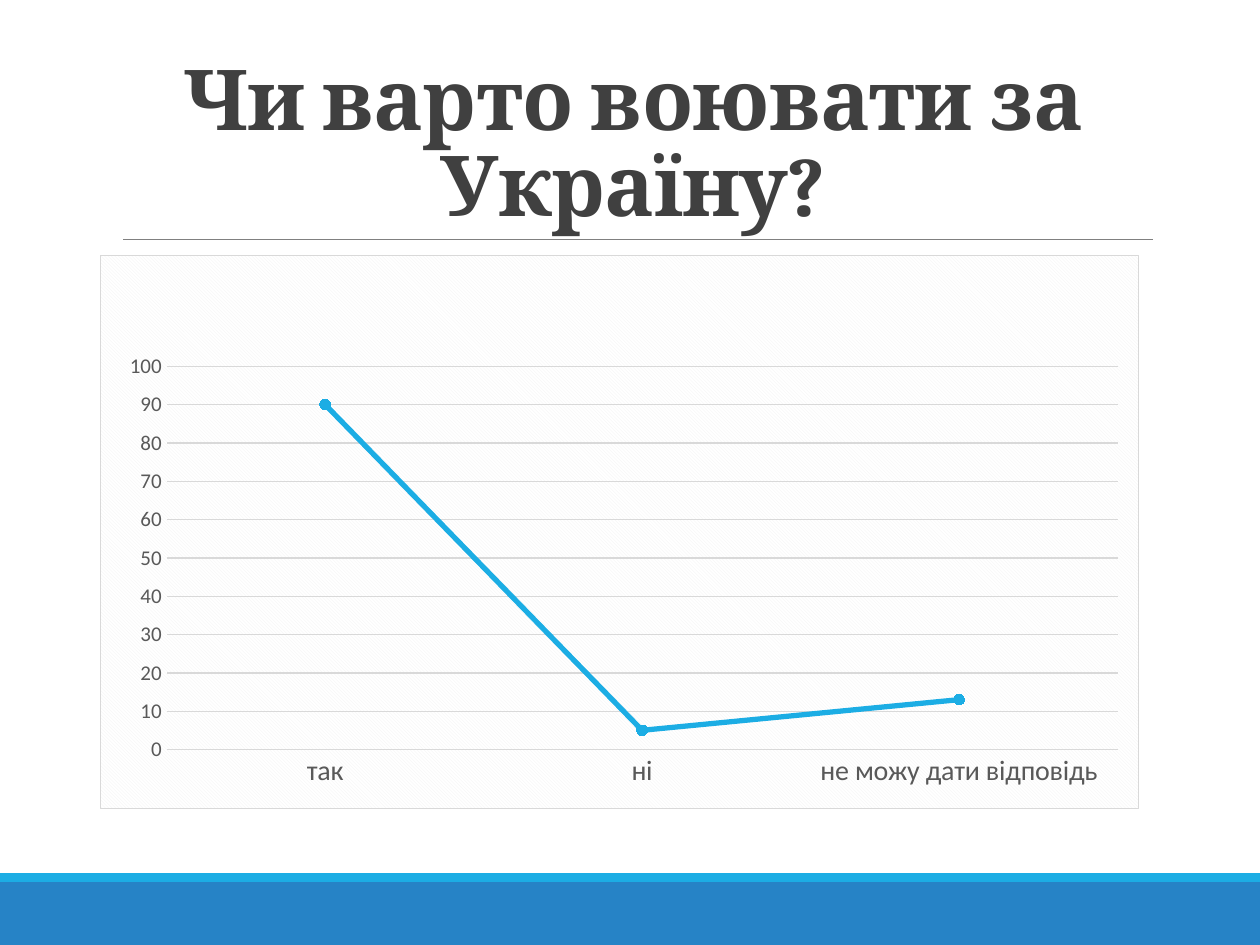
from lxml import etree
from pptx import Presentation
from pptx.chart.data import CategoryChartData
from pptx.dml.color import RGBColor
from pptx.enum.chart import XL_CHART_TYPE, XL_MARKER_STYLE, XL_TICK_MARK
from pptx.enum.shapes import MSO_CONNECTOR, MSO_SHAPE
from pptx.enum.text import MSO_ANCHOR, PP_ALIGN
from pptx.oxml import parse_xml
from pptx.oxml.ns import nsdecls, qn
from pptx.util import Inches, Pt

LINE = XL_CHART_TYPE.LINE_MARKERS
CIRCLE = XL_MARKER_STYLE.CIRCLE
NO_TICK = XL_TICK_MARK.NONE
STRAIGHT = MSO_CONNECTOR.STRAIGHT
RECT = MSO_SHAPE.RECTANGLE
BOTTOM = MSO_ANCHOR.BOTTOM
CENTER = PP_ALIGN.CENTER

BLUE = RGBColor(0x26, 0x83, 0xC6)
CYAN = RGBColor(0x1C, 0xAD, 0xE4)
DARK = RGBColor(0x40, 0x40, 0x40)
GRAY = RGBColor(0x80, 0x80, 0x80)
TEXT = RGBColor(0x59, 0x59, 0x59)
GRID = RGBColor(0xD9, 0xD9, 0xD9)
PALE = RGBColor(0xF2, 0xF2, 0xF2)
WHITE = RGBColor(0xFF, 0xFF, 0xFF)

ANSWERS = {"так": 90, "ні": 5, "не можу дати відповідь": 13}


def add_band(slide, left, top, width, height, color):
    """Draw one plain filled band."""
    band = slide.shapes.add_shape(
        RECT, Inches(left), Inches(top), Inches(width), Inches(height))
    band.shadow.inherit = False
    band.fill.solid()
    band.fill.fore_color.rgb = color
    band.line.fill.background()


def add_footer(slide, left, top, width, height):
    """Draw the footer with its thin bright strip on top."""
    strip = 0.07
    add_band(slide, left, top + strip, width, height - strip, BLUE)
    add_band(slide, left, top, width, strip, CYAN)


def add_title(slide, left, top, width, height):
    """Write the question and the rule beneath it."""
    base = Inches(top + height)
    rule = slide.shapes.add_connector(
        STRAIGHT, Inches(left + 0.08), base, Inches(left + width), base)
    rule.line.color.rgb = GRAY
    rule.line.width = Pt(0.5)
    etree.SubElement(rule._element.spPr, qn("a:effectLst"))

    box = slide.shapes.add_textbox(
        Inches(left), Inches(top), Inches(width), Inches(height))
    frame = box.text_frame
    frame.word_wrap = True
    frame.vertical_anchor = BOTTOM
    para = frame.paragraphs[0]
    para.alignment = CENTER
    para.line_spacing = 0.85
    run = para.add_run()
    run.text = "Чи варто воювати за Україну?"
    run.font.name = "Cambria"
    run.font.size = Pt(48)
    run.font.bold = True
    run.font.color.rgb = DARK
    run.font._element.set("spc", "-50")


def style_axis(axis, size):
    """Set the labels of an axis and hide its line."""
    axis.major_tick_mark = NO_TICK
    axis.minor_tick_mark = NO_TICK
    axis.format.line.fill.background()
    font = axis.tick_labels.font
    font.name = "Calibri"
    font.size = Pt(size)
    font.color.rgb = TEXT


def frame_chart(chart):
    """Give the chart its hatched ground, border and plot position."""
    space = chart._chartSpace
    space.find(qn("c:chart")).addnext(parse_xml(
        f'<c:spPr {nsdecls("c", "a")}><a:pattFill prst="dkDnDiag">'
        f'<a:fgClr><a:srgbClr val="{PALE}"/></a:fgClr>'
        f'<a:bgClr><a:srgbClr val="{WHITE}"/></a:bgClr></a:pattFill>'
        f'<a:ln w="{Pt(0.75)}"><a:solidFill><a:srgbClr val="{GRID}"/>'
        '</a:solidFill></a:ln></c:spPr>'))
    plot = space.find(".//" + qn("c:plotArea"))
    for old in plot.findall(qn("c:layout")):
        plot.remove(old)
    spots = {"x": 0.064, "y": 0.201, "w": 0.916, "h": 0.693}
    modes = "".join(f'<c:{key}Mode val="edge"/>' for key in "xy")
    sizes = "".join(f'<c:{key} val="{val}"/>' for key, val in spots.items())
    plot.insert(0, parse_xml(
        f'<c:layout {nsdecls("c")}><c:manualLayout>'
        f'<c:layoutTarget val="inner"/>{modes}{sizes}'
        '</c:manualLayout></c:layout>'))


def add_answers(slide, left, top, width, height):
    """Plot the answers as a line with round markers."""
    data = CategoryChartData()
    data.categories = list(ANSWERS)
    data.add_series("", list(ANSWERS.values()))
    chart = slide.shapes.add_chart(
        LINE, Inches(left), Inches(top), Inches(width), Inches(height),
        data).chart
    chart.has_title = False
    chart.has_legend = False
    chart.font.name = "Calibri"
    chart.font.size = Pt(10)
    frame_chart(chart)

    style_axis(chart.category_axis, 16)
    scale = chart.value_axis
    style_axis(scale, 12)
    scale.minimum_scale, scale.maximum_scale, scale.major_unit = 0, 100, 10
    grid = scale.major_gridlines.format.line
    grid.color.rgb = GRID
    grid.width = Pt(0.75)

    chart.plots[0].vary_by_categories = False
    line = chart.plots[0].series[0]
    line.smooth = False
    line.format.line.color.rgb = CYAN
    line.format.line.width = Pt(3)
    mark = line.marker
    mark.style = CIRCLE
    mark.size = 6
    mark.format.fill.solid()
    mark.format.fill.fore_color.rgb = CYAN
    mark.format.line.color.rgb = CYAN


def main():
    """Build and save the slide."""
    deck = Presentation()
    deck.slide_width = Inches(10)
    deck.slide_height = Inches(7.5)
    slide = deck.slides.add_slide(deck.slide_layouts[6])
    add_footer(slide, 0, 6.93, 10, 0.57)
    add_title(slide, 0.9, 0.31, 8.25, 1.59)
    add_answers(slide, 0.79, 2.02, 8.25, 4.4)
    deck.save("out.pptx")


if __name__ == "__main__":
    main()
